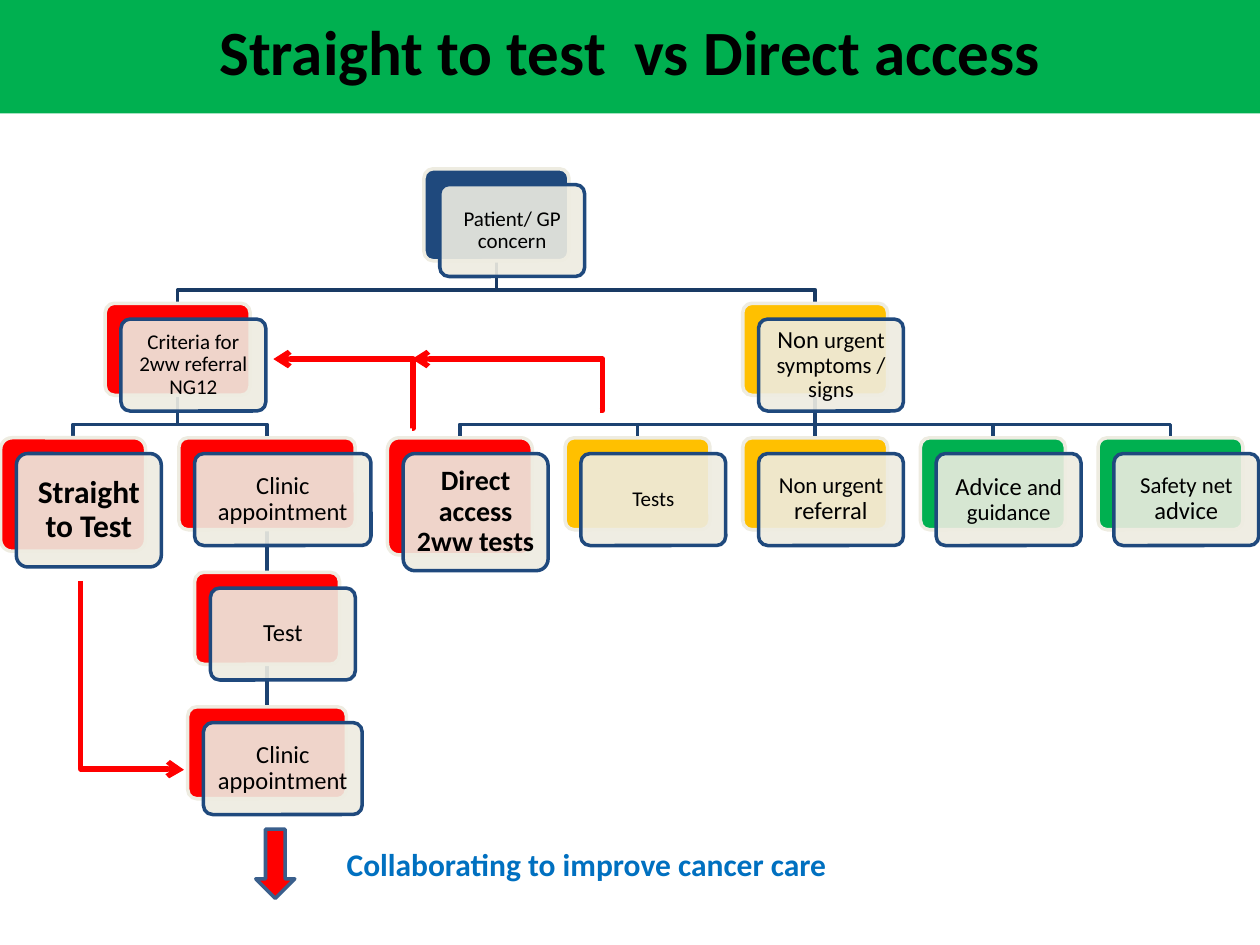
"""Build the slide comparing straight to test with direct access referral."""
from lxml.etree import SubElement
from pptx import Presentation
from pptx.dml.color import RGBColor
from pptx.enum.shapes import MSO_CONNECTOR, MSO_SHAPE
from pptx.enum.text import MSO_ANCHOR, PP_ALIGN
from pptx.oxml.ns import qn
from pptx.util import Inches, Pt

RED = RGBColor(0xFF, 0x00, 0x00)
GREEN = RGBColor(0x00, 0xB0, 0x50)
AMBER = RGBColor(0xFF, 0xC0, 0x00)
NAVY = RGBColor(0x1F, 0x49, 0x7D)
CREAM = RGBColor(0xEE, 0xEC, 0xE1)
BLACK = RGBColor(0x00, 0x00, 0x00)
BLUE = RGBColor(0x00, 0x70, 0xC0)
TOP_LINK = RGBColor(0x19, 0x3A, 0x64)
LOW_LINK = RGBColor(0x1C, 0x42, 0x71)
ARROW_EDGE = RGBColor(0x3A, 0x5F, 0x8C)

TITLE = "Straight to test  vs Direct access"
FOOTER = "Collaborating to improve cancer care"

FIRST_TOP, ROW_STEP = 1.34, 1.0675
BOX_W, BOX_H, OFFSET = 1.15, 0.73, 0.125
LINK_DROP = 0.23
COLUMNS = [3.65 + 1.41 * i for i in range(5)]

# name: (parent, level, centre, fill, runs, inset, size changes)
NODES = {
    "concern": (None, 0, 3.94, NAVY, [("Patient/ GP concern", 12)], 0.05, {}),
    "criteria": ("concern", 1, 1.41, RED,
                 [("Criteria for 2ww referral NG12", 12)], 0.05, {}),
    "straight": ("criteria", 2, 0.58, RED, [("Straight to Test", 18)], 0.07,
                 {"h": 0.9, "bold": True}),
    "clinic": ("criteria", 2, 2.12, RED, [("Clinic appointment", 14)], 0.06,
               {"w": 1.4}),
    "test": ("clinic", 3, 2.12, RED, [("Test", 14)], 0.06, {}),
    "return": ("test", 4, 2.12, RED, [("Clinic appointment", 14)], 0.06,
               {"w": 1.26}),
    "symptoms": ("concern", 1, COLUMNS[2], AMBER,
                 [("Non", 14), (" urgent symptoms / signs", 13)], 0.06, {}),
    "direct": ("symptoms", 2, COLUMNS[0], RED,
               [("Direct access 2ww tests", 16)], 0.07,
               {"h": 0.93, "bold": True}),
    "tests": ("symptoms", 2, COLUMNS[1], AMBER, [("Tests", 12)], 0.05, {}),
    "referral": ("symptoms", 2, COLUMNS[2], AMBER,
                 [("Non urgent ", 13), ("referral", 14)], 0.05, {}),
    "advice": ("symptoms", 2, COLUMNS[3], GREEN,
               [("Advice", 14), (" and guidance", 13)], 0.06, {}),
    "safety": ("symptoms", 2, COLUMNS[4], GREEN,
               [("Safety net ", 13), ("advice", 14)], 0.05, {}),
}

# begin x, begin y, end x, end y, bend, rotation
ROUTES = [
    (3.27, 3.4, 2.17, 2.85, -800, 0),
    (1.8, 4.95, 0.3, 5.77, 99600, 270),
    (4.76, 3.26, 3.27, 2.85, -1600, 0),
]


def set_line(sp, color, width):
    sp.line.color.rgb = color
    sp.line.width = Pt(width)


def add_box(s, kind, box, fill, edge=None):
    sp = s.shapes.add_shape(kind, *map(Inches, box))
    sp.shadow.inherit = False
    sp.fill.solid()
    sp.fill.fore_color.rgb = fill
    if edge is None:
        sp.line.fill.background()
    else:
        set_line(sp, edge, 2)
    return sp


def write(sp, runs, bold=False, inset=None, spacing=None):
    tf = sp.text_frame
    formats = {"word_wrap": True, "vertical_anchor": MSO_ANCHOR.MIDDLE}
    if inset is not None:
        for side in ("left", "right", "top", "bottom"):
            formats[f"margin_{side}"] = Inches(inset)
    for name, value in formats.items():
        setattr(tf, name, value)
    p = tf.paragraphs[0]
    p.alignment = PP_ALIGN.CENTER
    p.line_spacing = spacing
    for text, size, color in runs:
        r = p.add_run()
        r.text = text
        for name, value in {"name": "Calibri", "size": Pt(size), "bold": bold}.items():
            setattr(r.font, name, value)
        r.font.color.rgb = color


def add_node(s, level, centre, fill, runs, inset, changes):
    w, h = changes.get("w", BOX_W), changes.get("h", BOX_H)
    x, y = centre - w / 2, FIRST_TOP + level * ROW_STEP
    back = add_box(s, MSO_SHAPE.ROUNDED_RECTANGLE, (x, y, w, h), fill, CREAM)
    front = add_box(s, MSO_SHAPE.ROUNDED_RECTANGLE,
                    (x + OFFSET, y + OFFSET, w, h), CREAM, NAVY)
    for sp in (back, front):
        sp.adjustments[0] = 0.1
    color = front.fill._xPr.find(".//" + qn("a:srgbClr"))
    SubElement(color, qn("a:alpha")).set("val", "90000")
    write(front, [(text, size, BLACK) for text, size in runs],
          changes.get("bold", False), inset, 0.9)
    return back


def add_link(s, parent, child, color):
    x1, y1 = parent.left + parent.width // 2, parent.top + parent.height
    x2, y2 = child.left + child.width // 2, child.top
    if abs(x1 - x2) < Inches(0.01):
        sp = s.shapes.add_connector(MSO_CONNECTOR.STRAIGHT, x1, y1, x2, y2)
        sp.begin_connect(parent, 2)
        sp.end_connect(child, 0)
        SubElement(sp._element.spPr, qn("a:effectLst"))
    else:
        turn = y1 + Inches(LINK_DROP)
        fb = s.shapes.build_freeform(x1, y1)
        fb.add_line_segments([(x1, turn), (x2, turn), (x2, y2)], close=False)
        sp = fb.convert_to_shape()
        sp.fill.background()
        sp.shadow.inherit = False
    set_line(sp, color, 2)
    s.shapes._spTree.insert(2, sp._element)


def add_route(s, x1, y1, x2, y2, bend, rotation):
    sp = s.shapes.add_connector(MSO_CONNECTOR.ELBOW, *map(Inches, (x1, y1, x2, y2)))
    set_line(sp, RED, 3)
    spPr = sp._element.spPr
    if rotation:
        spPr.find(qn("a:xfrm")).set("rot", str(rotation * 60000))
    guides = spPr.find(qn("a:prstGeom")).get_or_add_avLst()
    guide = SubElement(guides, qn("a:gd"))
    guide.set("name", "adj1")
    guide.set("fmla", f"val {bend}")
    SubElement(sp.line._get_or_add_ln(), qn("a:tailEnd")).set("type", "arrow")
    SubElement(spPr, qn("a:effectLst"))


def main():
    prs = Presentation()
    prs.slide_width, prs.slide_height = Inches(10), Inches(7.5)
    s = prs.slides.add_slide(prs.slide_layouts[6])

    title = add_box(s, MSO_SHAPE.RECTANGLE, (0, -0.1, 10, 1), GREEN)
    write(title, [(TITLE, 36, BLACK)], bold=True)

    boxes = {name: add_node(s, *node[1:]) for name, node in NODES.items()}
    for name, (parent, level, *_) in NODES.items():
        if parent:
            add_link(s, boxes[parent], boxes[name], TOP_LINK if level == 1 else LOW_LINK)
    for route in ROUTES:
        add_route(s, *route)

    add_box(s, MSO_SHAPE.DOWN_ARROW, (2.03, 6.58, 0.31, 0.55), RED, ARROW_EDGE)
    footer = s.shapes.add_textbox(*map(Inches, (2.48, 6.66, 4.35, 0.4)))
    write(footer, [(FOOTER, 18, BLUE)], bold=True)
    prs.save("out.pptx")


if __name__ == "__main__":
    main()
